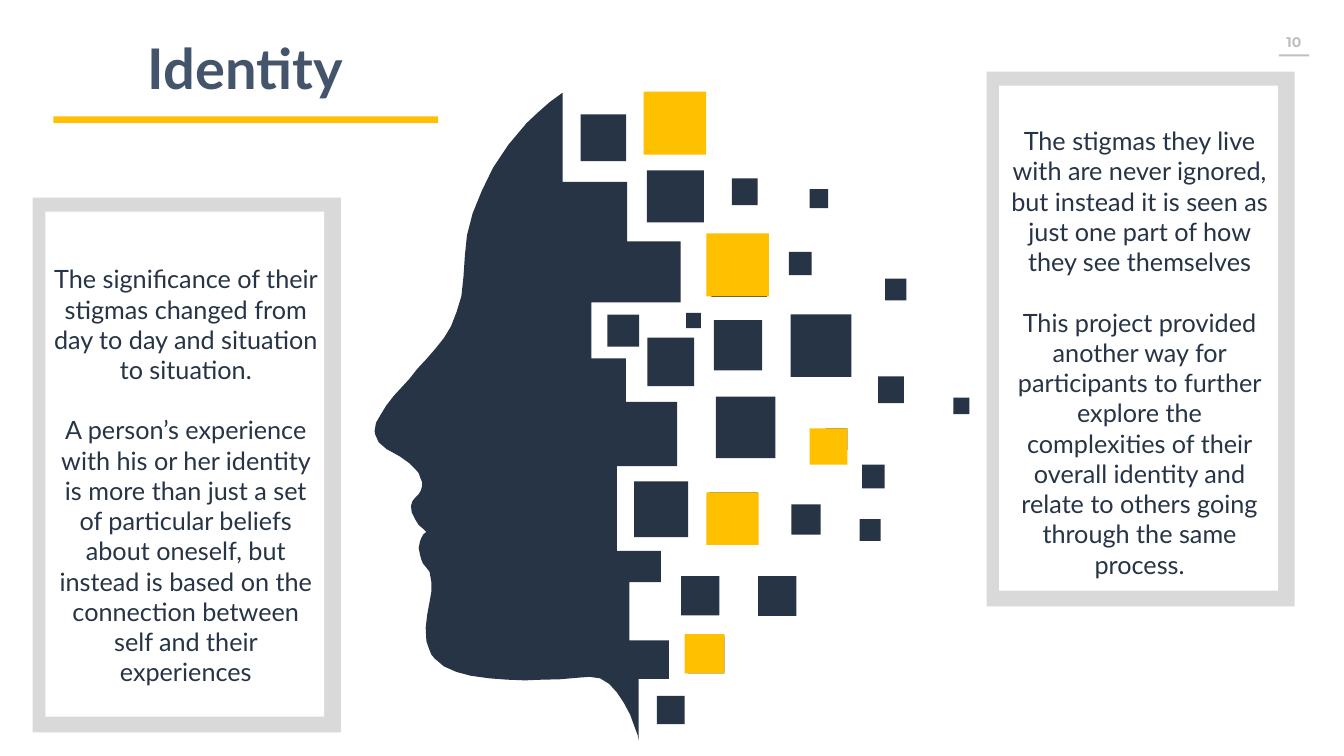
"""Build the "Identity" slide: a head dissolving into squares between two framed texts."""
import pptx
import pptx.dml.color
import pptx.enum.shapes
import pptx.enum.text
import pptx.util

NAVY, GOLD, SLATE = "263445", "FFC000", "44546A"
FRAME_GREY, NUMBER_GREY, WHITE = "D9D9D9", "BFBFBF", "FFFFFF"

PANELS = [
    (46.8, 282.2, 373, [
        "The significance of their stigmas changed from day to day and situation to situation.",
        "A person’s experience with his or her identity is more than just a set of particular "
        "beliefs about oneself, but instead is based on the connection between self and their "
        "experiences",
    ]),
    (1409, 102.2, 175.7, [
        "The stigmas they live with are never ignored, but instead it is seen as just one part "
        "of how they see themselves",
        "This project provided another way for participants to further explore the complexities "
        "of their overall identity and relate to others going through the same process.",
    ]),
]

HEAD_TOP = 132.5
HEAD_STEPS = [
    (803.5, 260), (895.7, 345), (972, 432), (844.5, 512), (894, 574), (967, 666),
    (881, 787), (944, 831.5), (899, 915), (955.5, 970), (912, 1057),
]
FACE_PROFILE = [
    (911, 1051), (906, 1037.5), (900, 1021), (891, 1004), (881, 989), (870, 977), (857, 969),
    (842, 967), (828, 968), (799, 970.5), (775, 971), (750, 972), (724, 971), (698, 969),
    (673, 965.5), (652, 960), (634, 952), (621, 941), (616, 935), (612, 925), (609, 916),
    (608, 897), (610, 879), (613, 863), (616, 846), (616, 831), (613.5, 817), (609, 811),
    (604, 805), (602, 800), (600, 793), (598, 783), (600, 773), (602, 768), (605, 763),
    (609, 760), (605, 756), (598, 750), (593, 742), (588, 732), (587, 723), (589, 716),
    (593, 711), (598, 706), (601, 701), (603, 694), (603, 689), (600.5, 683), (598, 676),
    (593, 670), (585, 662), (571, 652), (552, 641.5), (541, 632), (536, 621), (535, 616),
    (537, 604), (544, 592), (552, 579), (562, 566), (574, 553), (585, 541), (596, 527),
    (609, 513), (622, 498), (634, 483), (644, 466.5), (652, 446), (659, 423), (662, 395),
    (664, 365), (667, 336), (675, 305), (688, 273), (704, 240), (726, 207), (752, 176),
    (768, 161), (785, 146),
]
NAVY_SQUARES = [
    (1129, 449.3, 87, 89.3), (1016, 342.7, 79.2, 81.4), (923.8, 243.4, 81.4, 74.2),
    (1126.8, 360, 32.4, 33.1), (1045.4, 254.9, 36.7, 38.2), (1156.3, 270, 26.6, 27.4),
    (1180, 612, 30.2, 31), (1013, 703.4, 69.1, 72), (1019.5, 457.2, 69.1, 72),
    (972.7, 823, 54.7, 56.2), (924.5, 482.4, 67, 69.1), (938.2, 994.3, 39.6, 40.3),
    (867.6, 449.3, 45.4, 46), (1130.4, 720.7, 41.8, 43.2), (829.4, 163.4, 64.8, 67),
    (1231.2, 663.8, 32.4, 33.8), (1254.2, 537.8, 36.7, 38.2), (1227.6, 741.6, 30.2, 31),
    (1264.3, 398.2, 30.2, 31), (1082.9, 823, 54.7, 56.9), (932.4, 135.4, 75.6, 78.5),
    (905.8, 687.6, 77, 79.9), (1022.4, 566.6, 85, 87.8), (982, 908, 52.6, 54),
    (1361.5, 568, 23, 23.8), (980, 447.1, 20.9, 21.6),
]
GOLD_SQUARES = [
    (919.4, 131, 89.3, 90), (1008.7, 333.4, 89.3, 90), (1008.7, 703.4, 74.9, 74.9),
    (1156.3, 612, 54, 51.8), (977.8, 905.8, 56.9, 56.2),
]

Pt = pptx.util.Pt


def rgb(color):
    return pptx.dml.color.RGBColor.from_string(color)


def paint(shape, color):
    shape.shadow.inherit = False
    shape.fill.solid()
    shape.fill.fore_color.rgb = rgb(color)
    shape.line.fill.background()


def add_rect(slide, bounds, color):
    kind = pptx.enum.shapes.MSO_SHAPE.RECTANGLE
    paint(slide.shapes.add_shape(kind, *map(Pt, bounds)), color)


def add_text(slide, bounds, paragraphs, *, size, color, font="Lato", bold=False, gap=0):
    frame = slide.shapes.add_textbox(*map(Pt, bounds)).text_frame
    frame.word_wrap = True
    for index, wording in enumerate(paragraphs):
        paragraph = frame.paragraphs[0] if index == 0 else frame.add_paragraph()
        paragraph.alignment = pptx.enum.text.PP_ALIGN.CENTER
        if index:
            paragraph.space_before = Pt(gap)
        run = paragraph.add_run()
        run.text = wording
        run.font.name = font
        run.font.size = Pt(size)
        run.font.bold = bold
        run.font.color.rgb = rgb(color)


def add_head(slide):
    outline = []
    top = HEAD_TOP
    for edge, bottom in HEAD_STEPS:
        outline += [(edge, top), (edge, bottom)]
        top = bottom
    outline += FACE_PROFILE
    start, *rest = [(Pt(x), Pt(y)) for x, y in outline]
    builder = slide.shapes.build_freeform(*start)
    builder.add_line_segments(rest, close=True)
    paint(builder.convert_to_shape(), NAVY)


def add_panel(slide, left, top, text_top, paragraphs):
    add_rect(slide, (left, top, 440, 764), FRAME_GREY)
    add_rect(slide, (left + 18, top + 20, 398, 721.5), WHITE)
    text_height = top + 742 - text_top
    add_text(slide, (left + 22.3, text_top, 392.4, text_height), paragraphs,
             size=36, color=NAVY, gap=43.2)


def main():
    deck = pptx.Presentation()
    deck.slide_width, deck.slide_height = Pt(1919.5), Pt(1080)
    slide = deck.slides.add_slide(deck.slide_layouts[6])
    add_text(slide, (1814, 44.6, 68, 39), ["10"],
             size=20, color=NUMBER_GREY, font="Montserrat", bold=True)
    add_rect(slide, (1826.6, 77.8, 43.2, 2.9), NUMBER_GREY)
    add_head(slide)
    for squares, color in ((NAVY_SQUARES, NAVY), (GOLD_SQUARES, GOLD)):
        for bounds in squares:
            add_rect(slide, bounds, color)
    add_rect(slide, (76.3, 166.3, 549.4, 9.4), GOLD)
    add_text(slide, (-13, 44, 727.2, 104.4), ["Identity"], size=80, color=SLATE, bold=True)
    for panel in PANELS:
        add_panel(slide, *panel)
    deck.save("out.pptx")


if __name__ == "__main__":
    main()
